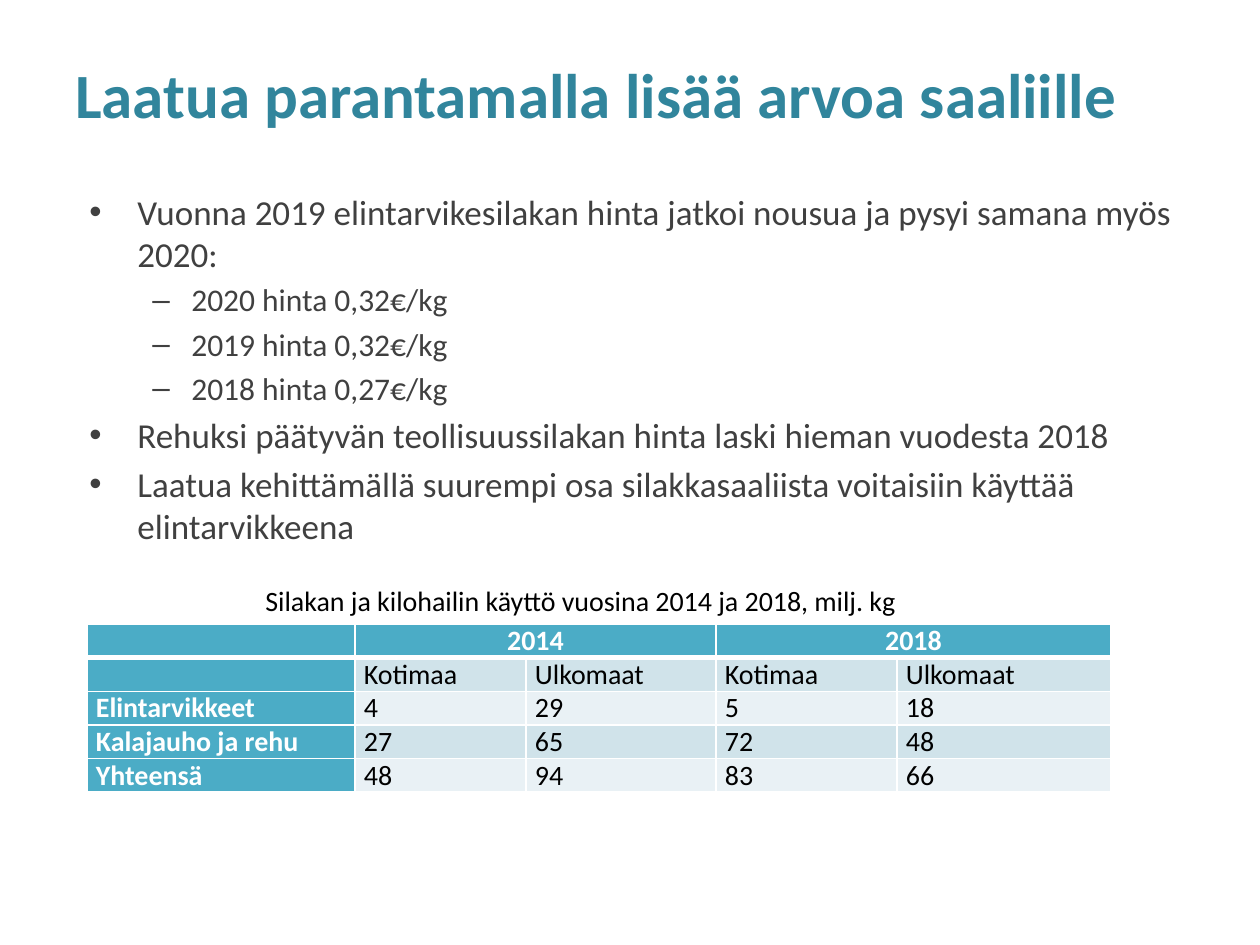
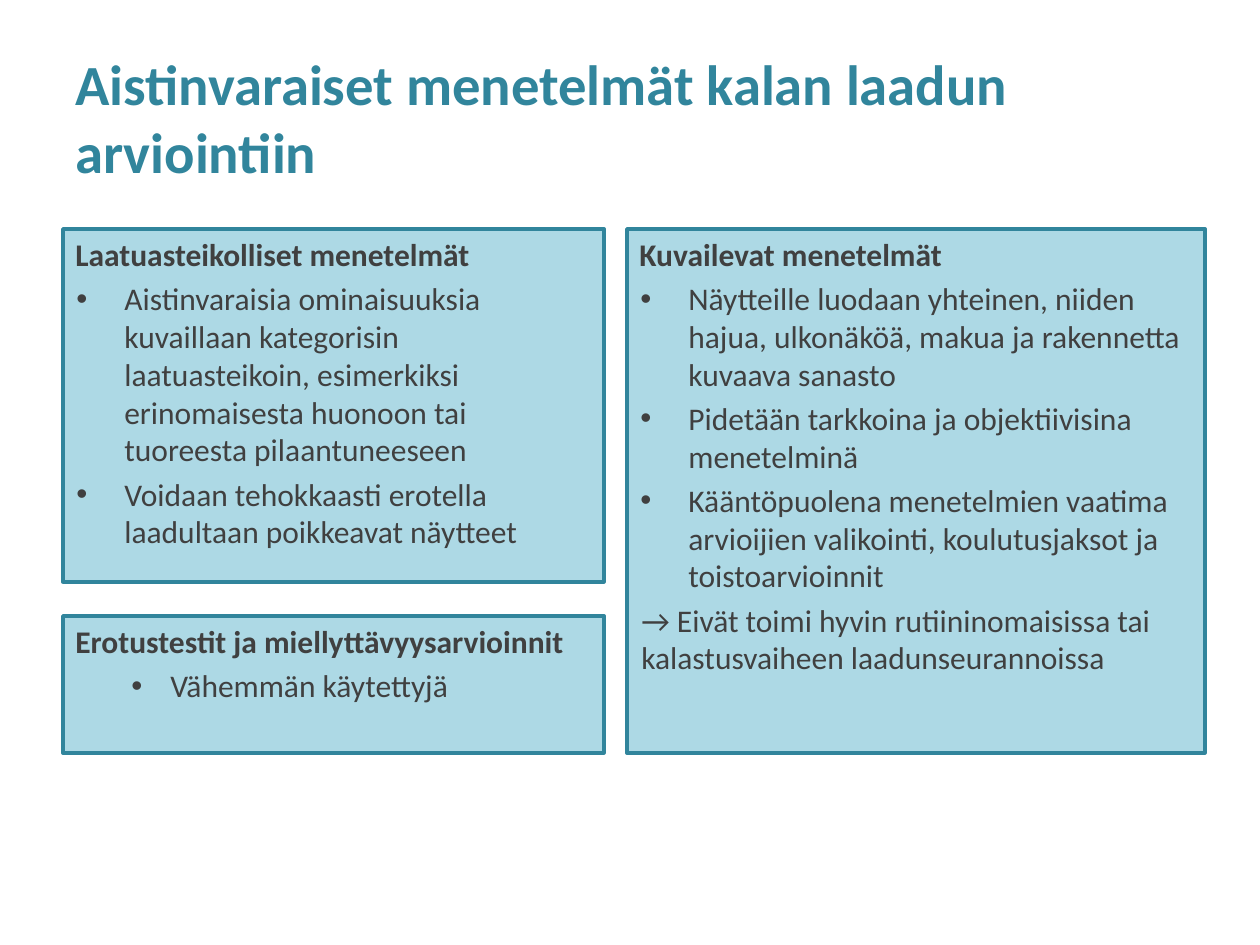
from lxml import etree
from pptx import Presentation
from pptx.dml.color import RGBColor
from pptx.enum.shapes import MSO_SHAPE
from pptx.enum.text import MSO_ANCHOR, PP_ALIGN
from pptx.oxml.ns import qn
from pptx.util import Emu, Pt

RECTANGLE = MSO_SHAPE.RECTANGLE
TOP, MIDDLE = MSO_ANCHOR.TOP, MSO_ANCHOR.MIDDLE
LEFT, CENTER = PP_ALIGN.LEFT, PP_ALIGN.CENTER

EMU_PER_PX = 914400 / 126
FONT = "Calibri"
TEAL, PALE_TEAL = "31859C", "ADD9E5"
GRAY, BLACK, WHITE = "404040", "000000", "FFFFFF"
TABLE_HEADER = "4BACC6"
TABLE_BANDS = ["D0E3EA", "E9F1F5"]

STYLES = {
    "point": {"size": 20, "margin": 48, "indent": -48, "bullet": "•"},
    "price": {"size": 18, "margin": 102, "indent": -39, "bullet": "–"},
    "heading": {"size": 18, "bold": True},
    "item": {"size": 18, "margin": 49, "indent": -48, "bullet": "•"},
    "subitem": {"size": 18, "margin": 95, "indent": -39, "bullet": "•"},
    "conclusion": {"size": 18, "margin": 2},
}

QUALITY_TITLE = ("Laatua parantamalla lisää arvoa saaliille", 36, (63, 33, 1134, 120))
QUALITY_POINTS = [
    ("point", "Vuonna 2019 elintarvikesilakan hinta jatkoi nousua ja pysyi samana myös 2020:"),
    ("price", "2020 hinta 0,32€/kg"),
    ("price", "2019 hinta 0,32€/kg"),
    ("price", "2018 hinta 0,27€/kg"),
    ("point", "Rehuksi päätyvän teollisuussilakan hinta laski hieman vuodesta 2018"),
    ("point", "Laatua kehittämällä suurempi osa silakkasaaliista voitaisiin käyttää elintarvikkeena"),
]
USAGE_CAPTION = "Silakan ja kilohailin käyttö vuosina 2014 ja 2018, milj. kg"
USAGE_ROWS = [
    ["", "2014", "", "2018", ""],
    ["", "Kotimaa", "Ulkomaat", "Kotimaa", "Ulkomaat"],
    ["Elintarvikkeet", "4", "29", "5", "18"],
    ["Kalajauho ja rehu", "27", "65", "72", "48"],
    ["Yhteensä", "48", "94", "83", "66"],
]
USAGE_WIDTHS = [268, 171, 190, 181, 214]
USAGE_ROW_HEIGHT = 33

METHODS_TITLE = ("Aistinvaraiset menetelmät kalan laadun arviointiin", 32.4, (63, 38, 1134, 157))
METHOD_BOXES = [
    ((63, 229, 541, 353), [
        ("heading", "Laatuasteikolliset menetelmät"),
        ("item", "Aistinvaraisia ominaisuuksia kuvaillaan kategorisin laatuasteikoin, "
                 "esimerkiksi erinomaisesta huonoon tai tuoreesta pilaantuneeseen"),
        ("item", "Voidaan tehokkaasti erotella laadultaan poikkeavat näytteet"),
    ]),
    ((627, 229, 578, 524), [
        ("heading", "Kuvailevat menetelmät"),
        ("item", "Näytteille luodaan yhteinen, niiden hajua, ulkonäköä, makua ja "
                 "rakennetta kuvaava sanasto"),
        ("item", "Pidetään tarkkoina ja objektiivisina menetelminä"),
        ("item", "Kääntöpuolena menetelmien vaatima arvioijien valikointi, "
                 "koulutusjaksot ja toistoarvioinnit"),
        ("conclusion", "→ Eivät toimi hyvin rutiininomaisissa tai kalastusvaiheen "
                       "laadunseurannoissa"),
    ]),
    ((63, 616, 541, 137), [
        ("heading", "Erotustestit ja miellyttävyysarvioinnit"),
        ("subitem", "Vähemmän käytettyjä"),
    ]),
]


def px(length):
    return Emu(round(length * EMU_PER_PX))


def color(hex_value):
    return RGBColor.from_string(hex_value)


def paint(target, hex_value):
    target.fill.solid()
    target.fill.fore_color.rgb = color(hex_value)


def format_runs(paragraph, size, text_color, bold=False):
    for run in paragraph.runs:
        run.font.name = FONT
        run.font.size = Pt(size)
        run.font.bold = bold
        run.font.color.rgb = color(text_color)


def add_text_box(slide, box, text, size, text_color, bold=False, anchor=TOP):
    text_frame = slide.shapes.add_textbox(*map(px, box)).text_frame
    text_frame.word_wrap = True
    text_frame.vertical_anchor = anchor
    text_frame.text = text
    format_runs(text_frame.paragraphs[0], size, text_color, bold)
    return text_frame


def add_title(slide, title):
    text, size, box = title
    add_text_box(slide, box, text, size, TEAL, True, MIDDLE)


def write_list(text_frame, entries):
    text_frame.word_wrap = True
    text_frame.vertical_anchor = TOP
    text_frame.text = "\n".join(text for _, text in entries)
    for index, (paragraph, (name, _)) in enumerate(zip(text_frame.paragraphs, entries)):
        style = STYLES[name]
        paragraph.alignment = LEFT
        if index:
            paragraph.space_before = Pt(style["size"] / 5)
        properties = paragraph._p.get_or_add_pPr()
        properties.set("marL", str(px(style.get("margin", 0))))
        properties.set("indent", str(px(style.get("indent", 0))))
        if "bullet" in style:
            etree.SubElement(properties, qn("a:buFont"), typeface="Arial")
            etree.SubElement(properties, qn("a:buChar"), char=style["bullet"])
        format_runs(paragraph, style["size"], GRAY, style.get("bold", False))


def add_borders(cell, bottom_width):
    properties = cell._tc.get_or_add_tcPr()
    for side, width in (("L", 1), ("R", 1), ("T", 1), ("B", bottom_width)):
        line = etree.SubElement(properties, qn(f"a:ln{side}"), w=str(Pt(width)))
        fill = etree.SubElement(line, qn("a:solidFill"))
        etree.SubElement(fill, qn("a:srgbClr"), val=WHITE)


def add_usage_table(slide, left, top):
    row_count, column_count = len(USAGE_ROWS), len(USAGE_WIDTHS)
    size = sum(USAGE_WIDTHS), row_count * USAGE_ROW_HEIGHT
    table = slide.shapes.add_table(
        row_count, column_count, *map(px, (left, top, *size))).table
    for column, width in zip(table.columns, USAGE_WIDTHS):
        column.width = px(width)
    for row_index, values in enumerate(USAGE_ROWS):
        table.rows[row_index].height = px(USAGE_ROW_HEIGHT)
        for column_index, value in enumerate(values):
            cell = table.cell(row_index, column_index)
            is_header = row_index == 0 or column_index == 0
            add_borders(cell, 3 if row_index == 0 else 1)
            paint(cell, TABLE_HEADER if is_header else TABLE_BANDS[(row_index - 1) % 2])
            cell.margin_left = cell.margin_right = px(9)
            cell.margin_top = cell.margin_bottom = 0
            cell.text = value
            paragraph = cell.text_frame.paragraphs[0]
            paragraph.alignment = CENTER if row_index == 0 else LEFT
            format_runs(paragraph, 16, WHITE if is_header else BLACK, is_header)
            if not value:
                etree.SubElement(paragraph._p, qn("a:endParaRPr"), sz="1600")
    for column_index in (1, 3):
        table.cell(0, column_index).merge(table.cell(0, column_index + 1))


def add_method_box(slide, box, entries):
    shape = slide.shapes.add_shape(RECTANGLE, *map(px, box))
    shape.shadow.inherit = False
    paint(shape, PALE_TEAL)
    shape.line.color.rgb = color(TEAL)
    shape.line.width = Pt(2)
    write_list(shape.text_frame, entries)


def main():
    presentation = Presentation()
    presentation.slide_width, presentation.slide_height = px(1260), px(945)
    blank = presentation.slide_layouts[6]

    slide = presentation.slides.add_slide(blank)
    add_title(slide, QUALITY_TITLE)
    points = slide.shapes.add_textbox(*map(px, (77, 184, 1120, 607)))
    write_list(points.text_frame, QUALITY_POINTS)
    add_text_box(slide, (253, 577, 707, 47), USAGE_CAPTION, 16, BLACK)
    add_usage_table(slide, 87, 624)

    slide = presentation.slides.add_slide(blank)
    add_title(slide, METHODS_TITLE)
    for box, entries in METHOD_BOXES:
        add_method_box(slide, box, entries)

    presentation.save("out.pptx")


if __name__ == "__main__":
    main()
